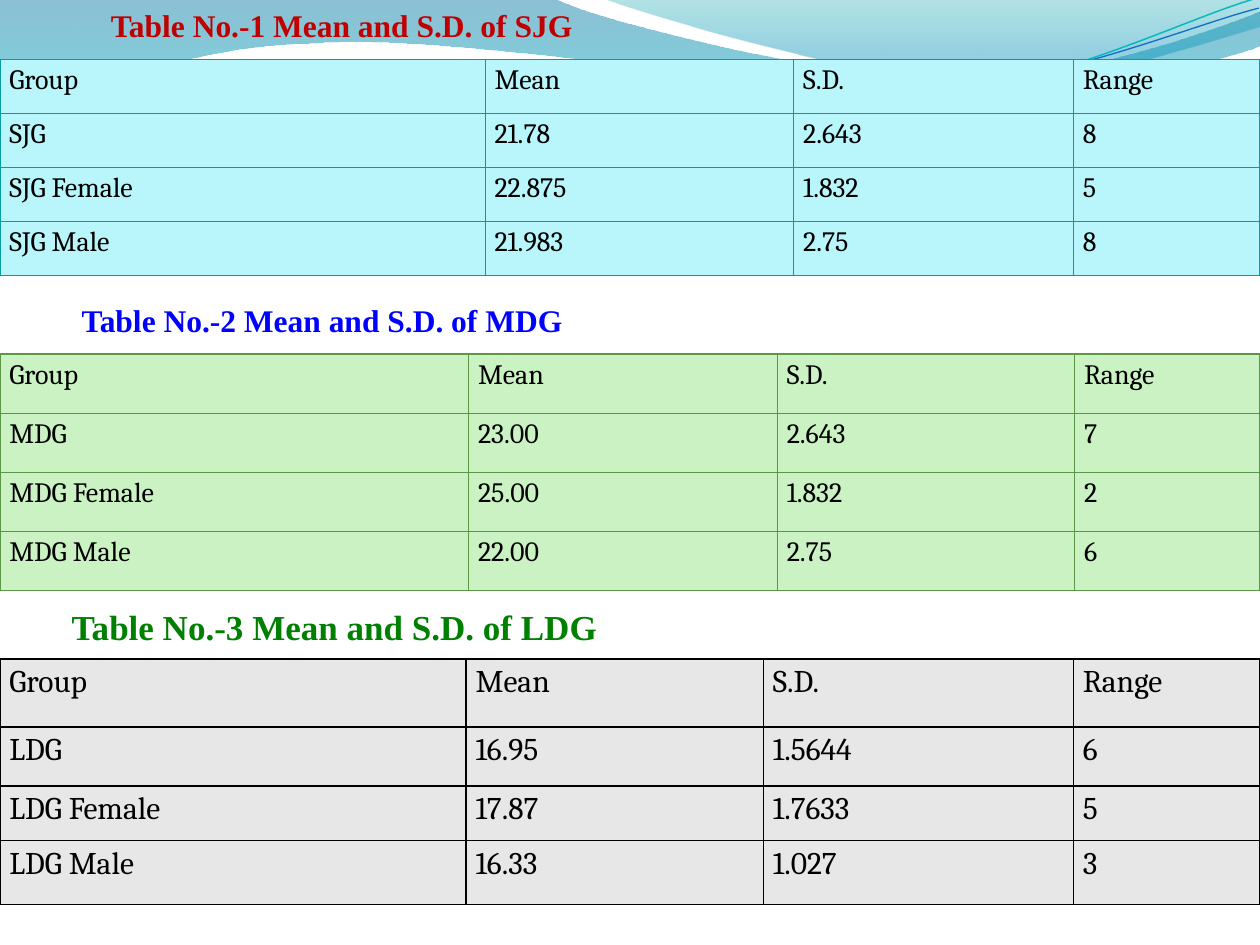
"""Build the slide with three tables of group means and standard deviations."""
import pptx
import pptx.dml.color
import pptx.enum.text
import pptx.oxml
import pptx.oxml.ns
import pptx.util

Inches = pptx.util.Inches
Pt = pptx.util.Pt
qn = pptx.oxml.ns.qn

HEADER = ["Group", "Mean", "S.D.", "Range"]
DARK_WAVE = [[(0, 0)], [(4.4, -0.01)],
             [(4.76, 0.17), (6.64, 0.63), (7.58, 0.63)],
             [(8.53, 0.63), (9.58, 0.26), (10, 0.09)],
             [(10.01, 0.36)],
             [(9.83, 0.44), (8.7, 0.76), (7.46, 0.75)],
             [(6.22, 0.75), (3.82, 0.28), (2.57, 0.34)],
             [(1.29, 0.36), (0.46, 0.83), (-0.01, 1.13)], [(0, 0)]]
LIGHT_WAVE = [[(4.79, -0.01)],
              [(5.09, 0.11), (6.82, 0.62), (7.69, 0.65)],
              [(8.56, 0.69), (9.61, 0.32), (10, 0.21)],
              [(10, 0)], [(4.79, -0.01)]]
TEAL_STRAND = [[(-0.02, 0.87)],
               [(0.46, 0.72), (1.58, 0.41), (2.77, 0.42)],
               [(3.95, 0.42), (5.92, 0.93), (7.12, 0.9)],
               [(8.32, 0.87), (9.4, 0.36), (10, 0.22)]]
BLUE_STRAND = [[(-0.02, 0.8)],
               [(0.45, 0.75), (1.64, 0.45), (2.83, 0.46)],
               [(4.03, 0.46), (5.96, 0.88), (7.16, 0.85)],
               [(8.36, 0.83), (9.43, 0.42), (10.01, 0.3)]]


def rgb(value):
    """Return the colour for a hex string."""
    return pptx.dml.color.RGBColor.from_string(value)


def xml(markup):
    """Return an element parsed from markup in the drawing namespace."""
    head, rest = markup.split(" ", 1)
    return pptx.oxml.parse_xml(f'{head} {pptx.oxml.ns.nsdecls("a")} {rest}')


def apply_format(target, values):
    """Set each named attribute of the target."""
    for name, value in values.items():
        setattr(target, name, value)


def format_font(font, face, size, color, bold=False):
    """Give a font its face, size, colour and weight."""
    apply_format(font, {"name": face, "size": Pt(size), "bold": bold})
    font.color.rgb = rgb(color)


def add_curve(shapes, outline, close):
    """Add a freeform of straight lines and cubic curves."""
    start, *rest = [(Inches(x), Inches(y)) for segment in outline for x, y in segment]
    builder = shapes.build_freeform(*start, scale=1.0)
    builder.add_line_segments(rest, close=close)
    curve = builder.convert_to_shape()
    curve.shadow.inherit = False
    lines = iter(list(curve._element.iter(qn("a:lnTo"))))
    for segment in outline[1:]:
        steps = [next(lines) for _ in segment]
        if len(steps) == 3:
            bezier = xml("<a:cubicBezTo />")
            steps[0].addprevious(bezier)
            for step in steps:
                bezier.append(step[0])
                step.getparent().remove(step)
    return curve


def add_wave(shapes, outline, stops):
    """Add a translucent wave shaded from top to bottom."""
    wave = add_curve(shapes, outline, True)
    wave.line.fill.background()
    wave.fill.gradient()
    wave.fill.gradient_angle = 270
    for stop, (position, color, _) in zip(wave.fill.gradient_stops, stops):
        stop.position = position
        stop.color.rgb = rgb(color)
    shades = wave._element.spPr.iter(qn("a:srgbClr"))
    for shade, (_, _, opacity) in zip(shades, stops):
        shade.append(xml(f'<a:alpha val="{opacity * 1000}"/>'))


def add_strand(shapes, outline, color, width):
    """Add a thin open curve, slightly tilted."""
    strand = add_curve(shapes, outline, False)
    strand.rotation = 357.3
    strand.fill.background()
    strand.line.color.rgb = rgb(color)
    strand.line.width = Pt(width)


def set_borders(cell, color, width):
    """Draw all four borders of a cell."""
    properties = cell._tc.get_or_add_tcPr()
    for index, side in enumerate("LRTB"):
        properties.insert(index, xml(
            f'<a:ln{side} w="{Pt(width)}"><a:solidFill>'
            f'<a:srgbClr val="{color}"/></a:solidFill></a:ln{side}>'))


def add_group_table(slide, top, widths, heights, records, fill, border, width, size):
    """Add a full-width table of group statistics."""
    rows = [HEADER, *records]
    frame = slide.shapes.add_table(len(rows), len(HEADER), 0, Inches(top),
                                   Inches(sum(widths)), Inches(sum(heights)))
    table = frame.table
    apply_format(table, {"first_row": False, "horz_banding": False})
    for column, column_width in zip(table.columns, widths):
        column.width = Inches(column_width)
    for row, height, values in zip(table.rows, heights, rows):
        row.height = Inches(height)
        for cell, value in zip(row.cells, values):
            apply_format(cell, {"text": value, "margin_left": Pt(5.4),
                                "margin_right": Pt(5.4),
                                "margin_top": 0, "margin_bottom": 0})
            cell.fill.solid()
            cell.fill.fore_color.rgb = rgb(fill)
            paragraph = cell.text_frame.paragraphs[0]
            paragraph.line_spacing = 1.15
            format_font(paragraph.runs[0].font, "Cambria", size, "000000")
            set_borders(cell, border, width)


def format_caption(caption, text, bounds, size, color, anchor="TOP", wrap=True):
    """Place and format a table caption."""
    apply_format(caption, dict(zip(("left", "top", "width", "height"), map(Inches, bounds))))
    apply_format(caption.text_frame, {
        "text": text, "word_wrap": wrap,
        "auto_size": pptx.enum.text.MSO_AUTO_SIZE.NONE,
        "vertical_anchor": pptx.enum.text.MSO_ANCHOR[anchor]})
    paragraph = caption.text_frame.paragraphs[0]
    paragraph.alignment = pptx.enum.text.PP_ALIGN.LEFT
    format_font(paragraph.runs[0].font, "Times New Roman", size, color, True)


def main():
    """Build and save the slide."""
    deck = pptx.Presentation()
    apply_format(deck, {"slide_width": Inches(10), "slide_height": Inches(7.5)})
    slide = deck.slides.add_slide(deck.slide_layouts[5])

    add_wave(slide.shapes, DARK_WAVE, [(0, "0074A1", 45), (1, "00C6CF", 55)])
    add_wave(slide.shapes, LIGHT_WAVE, [(0, "00A1A9", 30), (0.8, "008BBF", 45)])
    strands = slide.shapes.add_group_shape().shapes
    add_strand(strands, TEAL_STRAND, "0AB8BF", 0.85)
    add_strand(strands, BLUE_STRAND, "0F6FC6", 0.75)

    add_group_table(slide, 0.47, [3.85, 2.45, 2.22, 1.48], [0.43] * 4, [
        ["SJG", "21.78", "2.643", "8"],
        ["SJG Female", "22.875", "1.832", "5"],
        ["SJG Male", "21.983", "2.75", "8"]], "B9F6FC", "069CA3", 0.75, 16)
    add_group_table(slide, 2.81, [3.72, 2.45, 2.36, 1.47], [0.47] * 4, [
        ["MDG", "23.00", "2.643", "7"],
        ["MDG Female", "25.00", "1.832", "2"],
        ["MDG Male", "22.00", "2.75", "6"]], "CBF2C3", "5B9747", 0.75, 16)
    add_group_table(slide, 5.23, [3.7, 2.36, 2.46, 1.48], [0.54, 0.47, 0.43, 0.51], [
        ["LDG", "16.95", "1.5644", "6"],
        ["LDG Female", "17.87", "1.7633", "5"],
        ["LDG Male", "16.33", "1.027", "3"]], "E7E7E7", "000000", 1, 18)

    format_caption(slide.shapes.add_textbox(0, 0, 0, 0), "Table No.-3 Mean and S.D. of LDG",
                   (0.47, 4.38, 10, 0.81), 20, "008000", "BOTTOM")
    title = slide.shapes.title
    slide.shapes._spTree.append(title._element)
    format_caption(title, "Table No.-1 Mean and S.D. of SJG",
                   (0.78, 0, 6.41, 0.4), 18, "C00000")
    format_caption(slide.shapes.add_textbox(0, 0, 0, 0), "Table No.-2 Mean and S.D. of MDG",
                   (0.55, 2.34, 4.06, 0.4), 18, "0000FF", wrap=False)
    deck.save("out.pptx")


if __name__ == "__main__":
    main()
